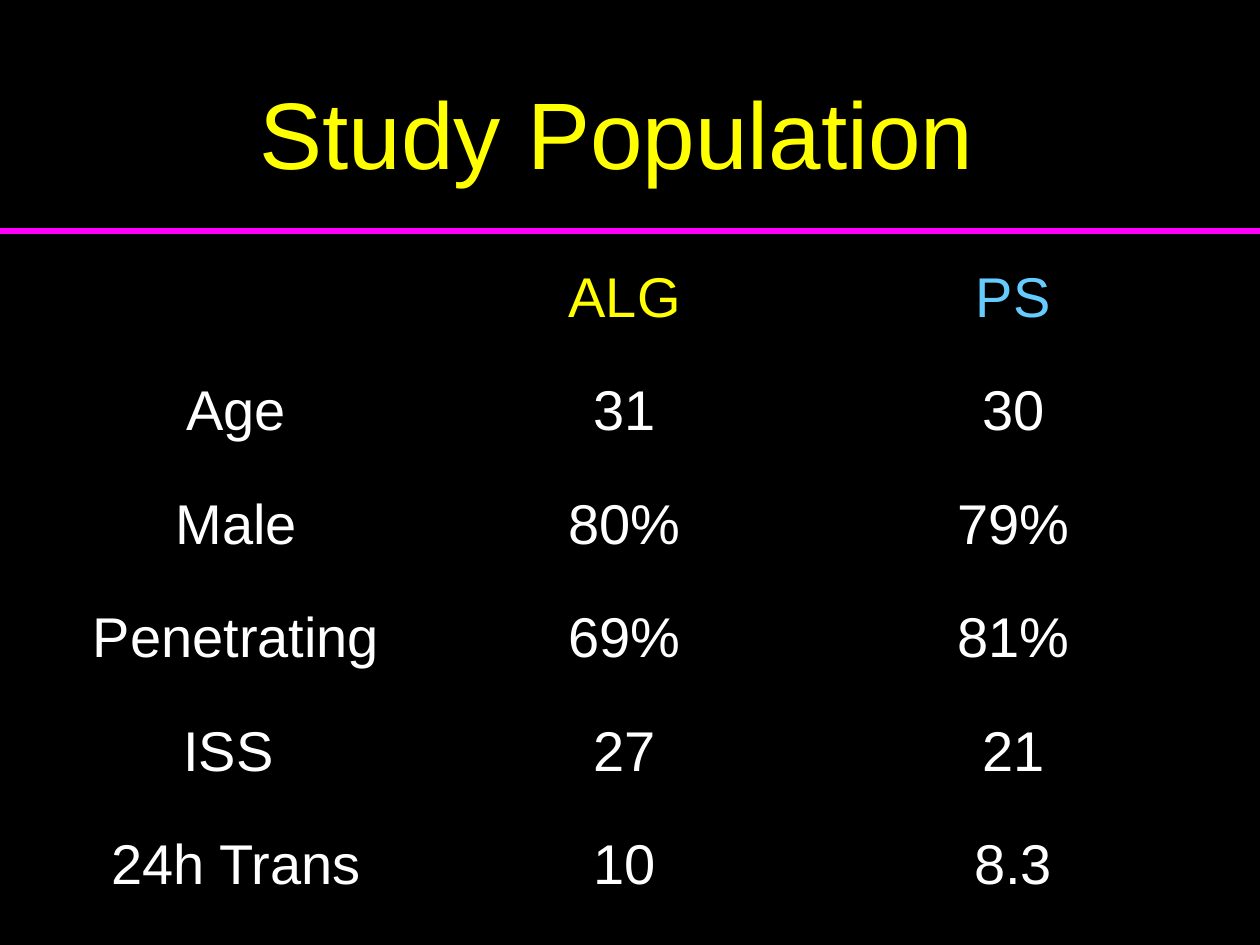
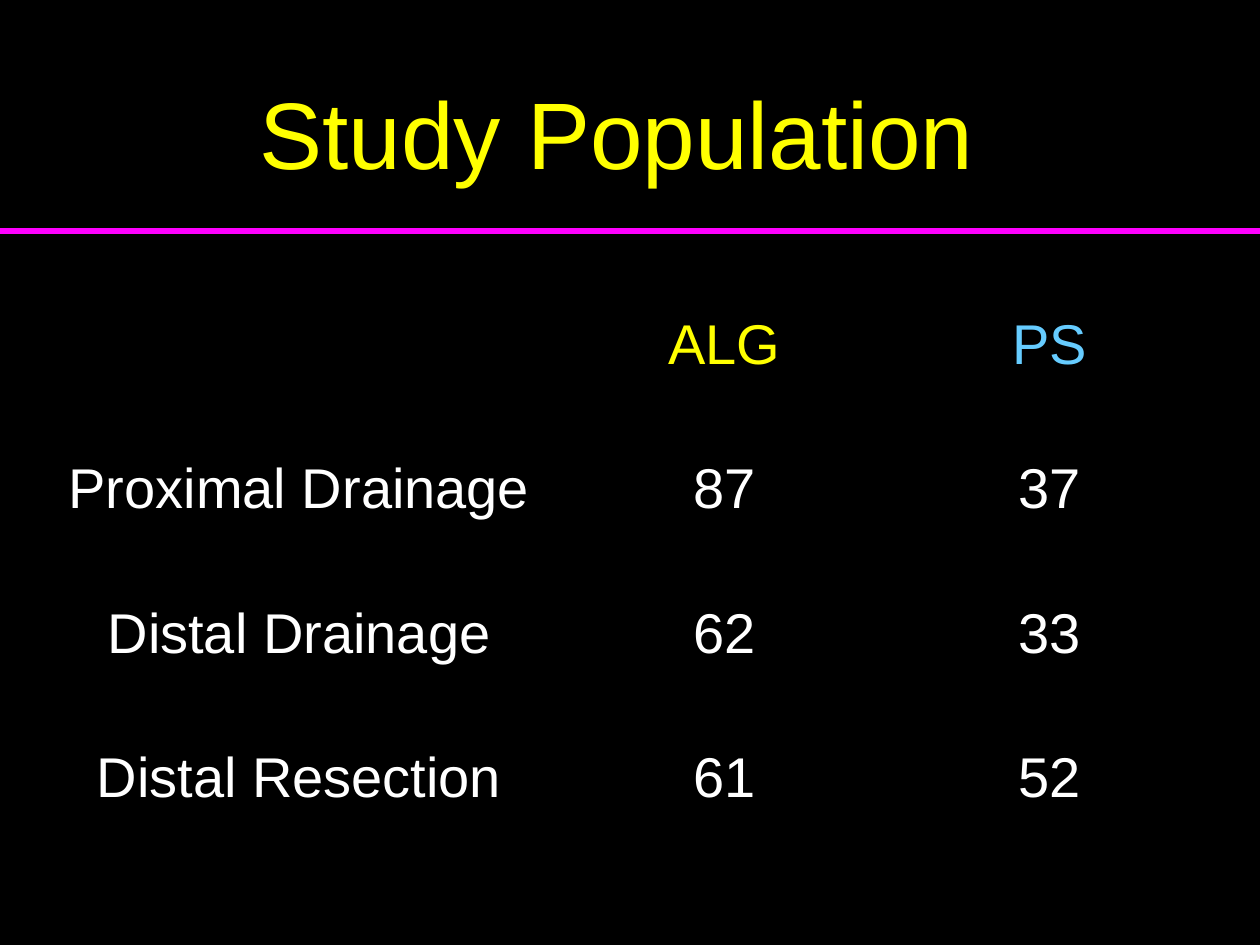
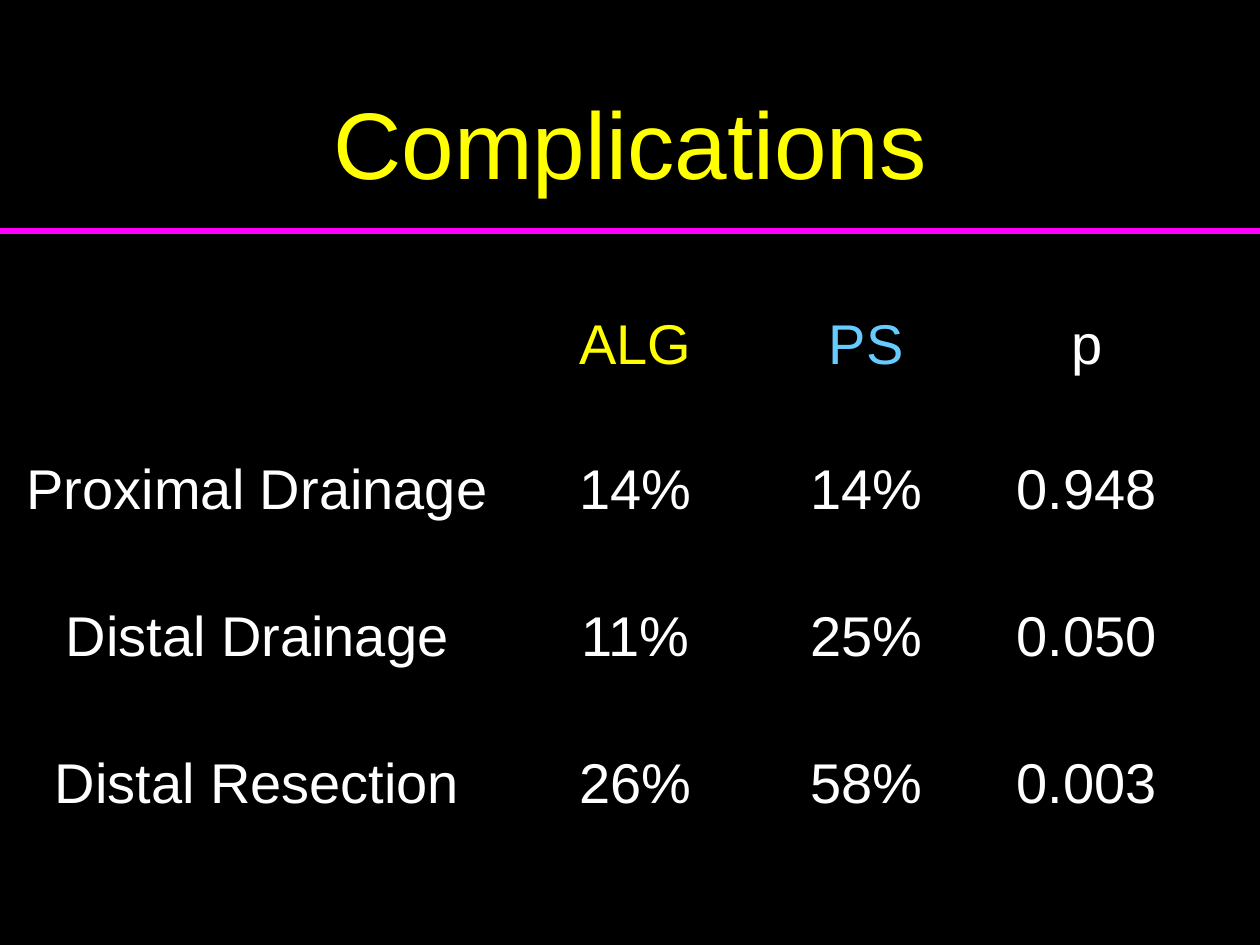
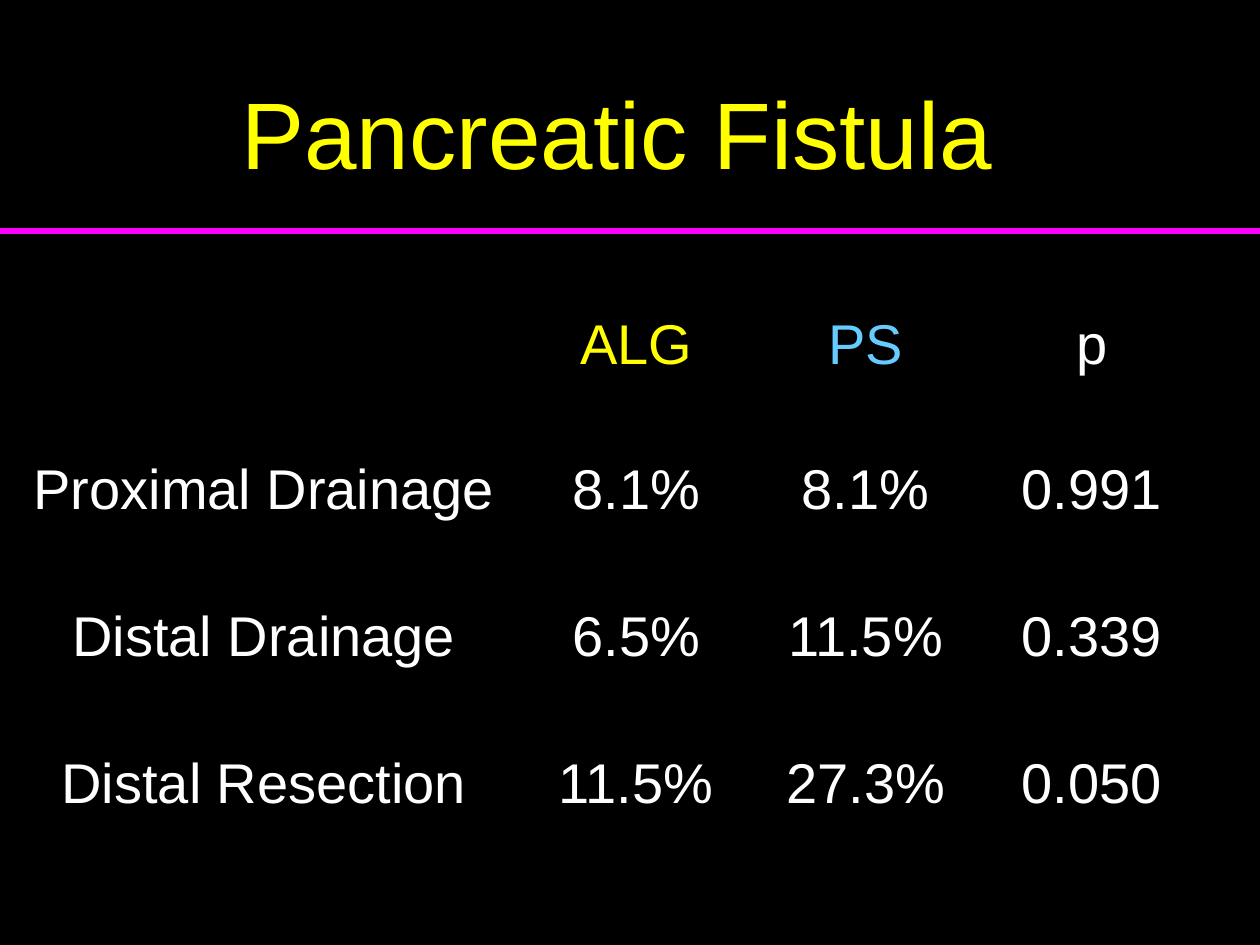
import itertools

import pptx
import pptx.dml.color
import pptx.enum.shapes
import pptx.enum.text
import pptx.oxml.ns
import pptx.util
from lxml import etree

RGBColor = pptx.dml.color.RGBColor
BLACK = RGBColor(0x00, 0x00, 0x00)
WHITE = RGBColor(0xFF, 0xFF, 0xFF)
YELLOW = RGBColor(0xFF, 0xFF, 0x00)
SKY = RGBColor(0x66, 0xCC, 0xFF)
MAGENTA = RGBColor(0xFF, 0x00, 0xFF)

FONT = "Arial"
EMU_PER_PX = 7620  # 120 px to the inch
PAGE_WIDTH, PAGE_HEIGHT = 1200, 900
TITLE_HEIGHT = 150
RULE_TOP = 220
TITLE_ONLY_LAYOUT = 5
NO_STYLE_NO_GRID = "{2D5ABB26-0587-4C30-8999-92F81FD0307C}"

GROUP_COLORS = {"ALG": YELLOW, "PS": SKY}

SLIDES = [
    {
        "title": "Study Population ",
        "title_top": 50,
        "origin": (40, 230),
        "columns": [370, 370, 370],
        "heights": [108] * 6,
        "rows": [
            ["", "ALG", "PS"],
            ["Age", "31", "30"],
            ["Male", "80%", "79%"],
            ["Penetrating", "69%", "81%"],
            ["ISS ", "27", "21"],
            ["24h Trans", "10", "8.3"],
        ],
    },
    {
        "title": "Study Population ",
        "title_top": 50,
        "origin": (40, 260),
        "columns": [490, 320, 300],
        "heights": [137, 138, 138, 137],
        "rows": [
            ["", "ALG", "PS"],
            ["Proximal Drainage", "87", "37"],
            ["Distal Drainage", "62", "33"],
            ["Distal Resection", "61", "52"],
        ],
    },
    {
        "title": "Complications",
        "title_top": 60,
        "origin": (10, 260),
        "columns": [470, 250, 190, 230],
        "heights": [137, 140, 140, 140],
        "rows": [
            ["", "ALG", "PS", "p"],
            ["Proximal Drainage", "14%", "14%", "0.948"],
            ["Distal Drainage", "11%", "25%", "0.050"],
            ["Distal Resection", "26%", "58%", "0.003"],
        ],
    },
    {
        "title": "Pancreatic Fistula ",
        "title_top": 50,
        "origin": (10, 260),
        "columns": [483, 226, 211, 220],
        "heights": [137, 140, 140, 140],
        "rows": [
            ["", "ALG", "PS", "p"],
            ["Proximal Drainage", "8.1%", "8.1%", "0.991"],
            ["Distal Drainage", "6.5%", "11.5%", "0.339"],
            ["Distal Resection", "11.5%", "27.3%", "0.050"],
        ],
    },
]


def px(length):
    return pptx.util.Emu(length * EMU_PER_PX)


def write(frame, text, size, color):
    """Put one centred line of text into a text frame."""
    para = frame.paragraphs[0]
    para.alignment = pptx.enum.text.PP_ALIGN.CENTER
    span = para.add_run()
    span.text = text
    span.font.name = FONT
    span.font.size = pptx.util.Pt(size)
    span.font.color.rgb = color


def add_title(page, text, top):
    title = page.shapes.title
    title.left, title.top = px(0), px(top)
    title.width, title.height = px(PAGE_WIDTH), px(TITLE_HEIGHT)
    frame = title.text_frame
    frame.auto_size = pptx.enum.text.MSO_AUTO_SIZE.NONE
    frame.vertical_anchor = pptx.enum.text.MSO_ANCHOR.MIDDLE
    write(frame, text, size=54, color=YELLOW)


def add_results_table(page, origin, columns, heights, rows):
    left, top = origin
    table = page.shapes.add_table(
        len(rows), len(columns), px(left), px(top), px(sum(columns)), px(sum(heights))
    ).table
    table.first_row = table.horz_banding = False
    table._tbl.tblPr.find(pptx.oxml.ns.qn("a:tableStyleId")).text = NO_STYLE_NO_GRID
    for column, width in zip(table.columns, columns):
        column.width = px(width)
    for row, height in zip(table.rows, heights):
        row.height = px(height)
    for cell, text in zip(table.iter_cells(), itertools.chain.from_iterable(rows)):
        cell.fill.background()
        cell.vertical_anchor = pptx.enum.text.MSO_ANCHOR.MIDDLE
        if text:
            write(cell.text_frame, text, size=32, color=GROUP_COLORS.get(text, WHITE))


def add_rule(page):
    rule = page.shapes.add_connector(
        pptx.enum.shapes.MSO_CONNECTOR.STRAIGHT,
        px(0), px(RULE_TOP), px(PAGE_WIDTH), px(RULE_TOP),
    )
    rule.line.color.rgb = MAGENTA
    rule.line.width = pptx.util.Pt(3)
    etree.SubElement(rule._element.spPr, pptx.oxml.ns.qn("a:effectLst"))


def add_results_page(deck, title, title_top, **table):
    page = deck.slides.add_slide(deck.slide_layouts[TITLE_ONLY_LAYOUT])
    add_title(page, title, title_top)
    add_results_table(page, **table)
    add_rule(page)


def main():
    deck = pptx.Presentation()
    deck.slide_width, deck.slide_height = px(PAGE_WIDTH), px(PAGE_HEIGHT)
    backdrop = deck.slide_master.background.fill
    backdrop.solid()
    backdrop.fore_color.rgb = BLACK
    for content in SLIDES:
        add_results_page(deck, **content)
    deck.save("out.pptx")


if __name__ == "__main__":
    main()
